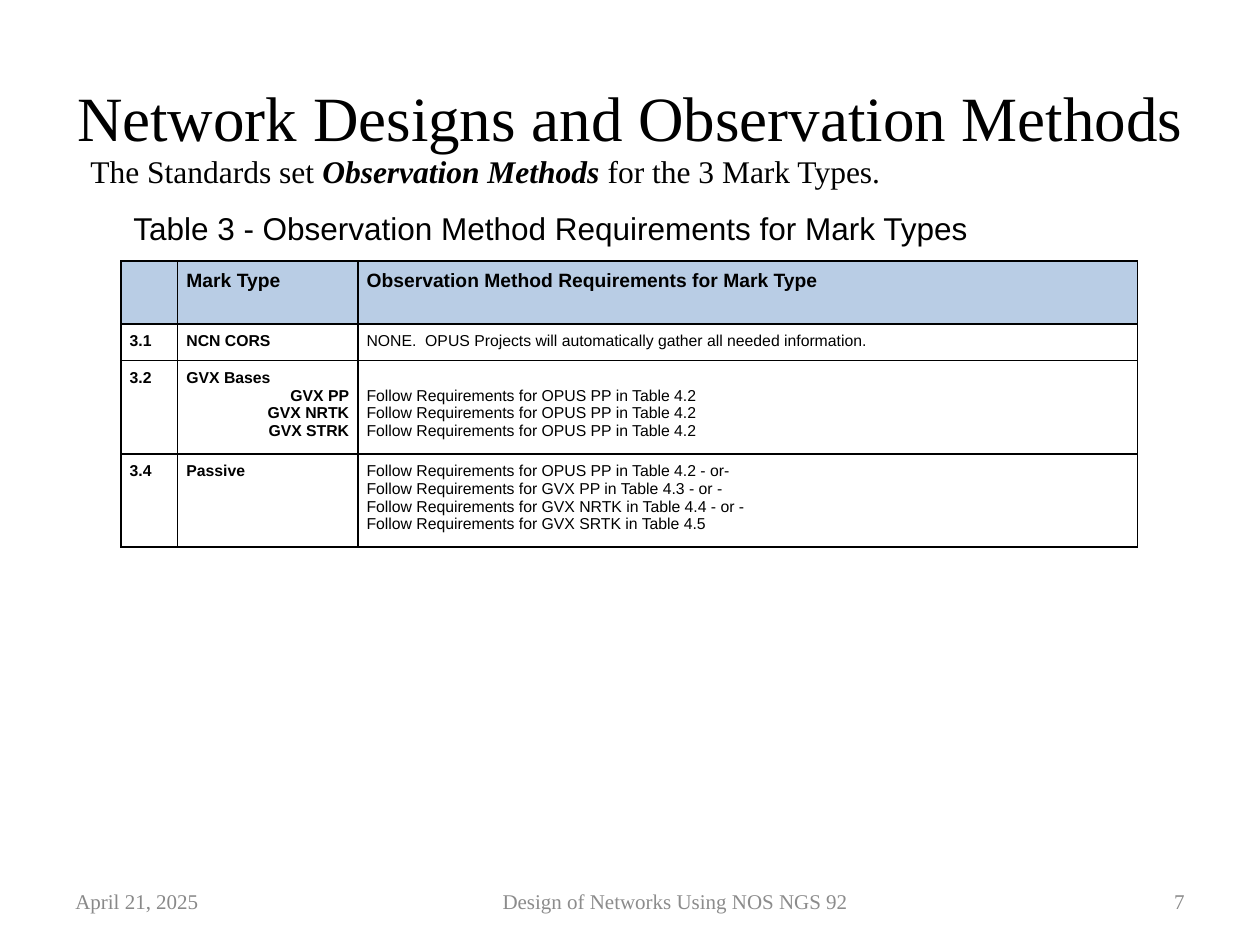
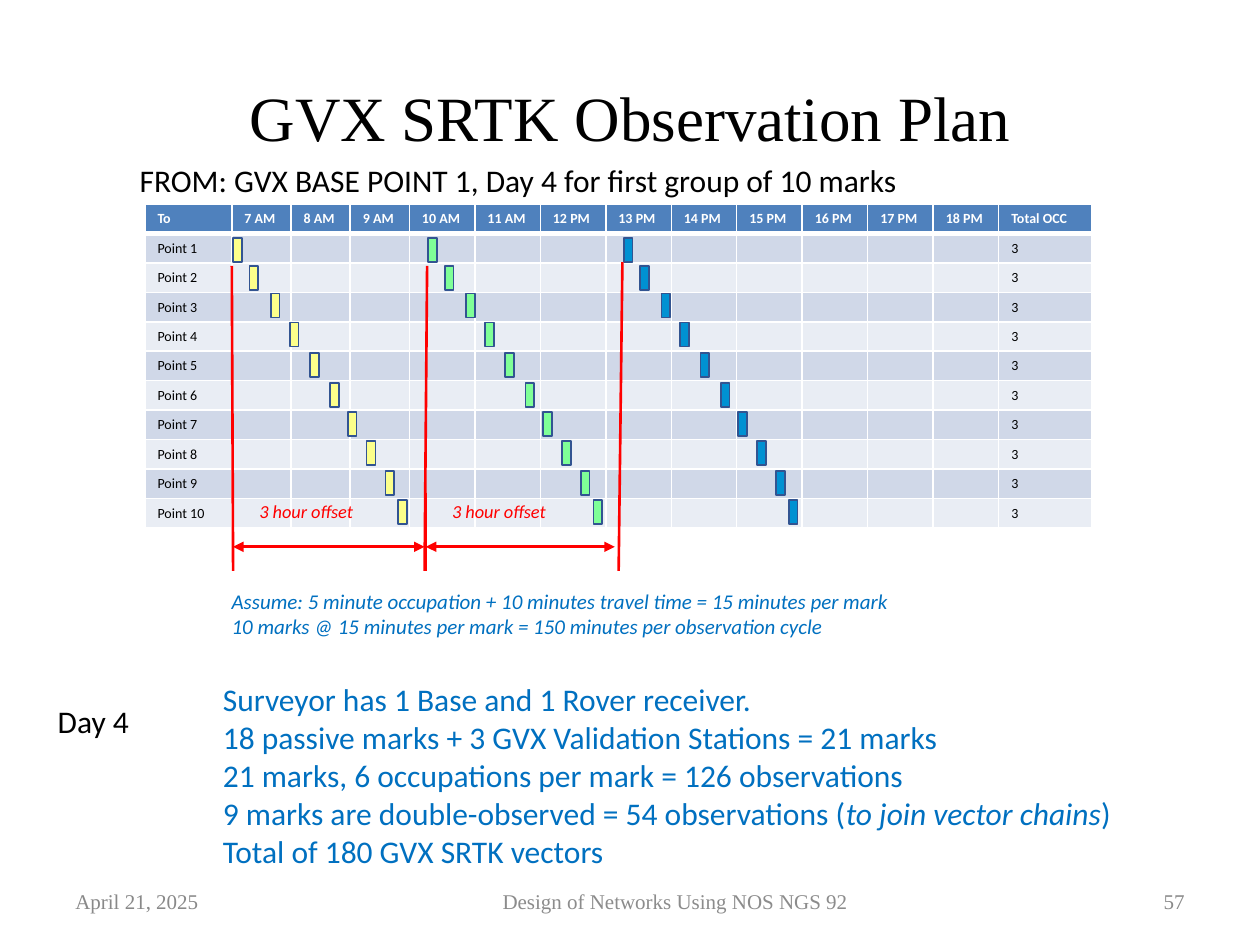
from dataclasses import dataclass, replace
from typing import NamedTuple, Optional

from lxml import etree
from pptx import Presentation
from pptx import util as u
from pptx.dml.color import RGBColor
from pptx.enum import shapes, text
from pptx.oxml import ns

BLACK = RGBColor(0x00, 0x00, 0x00)
WHITE = RGBColor(0xFF, 0xFF, 0xFF)
FOOTER_GRAY = RGBColor(0x89, 0x89, 0x89)
FOOTER_TITLE_GRAY = RGBColor(0x8C, 0x8C, 0x8C)
METHOD_HEADER = RGBColor(0xB9, 0xCD, 0xE5)
PLAN_HEADER = RGBColor(0x4F, 0x81, 0xBD)
PLAN_BANDS = (RGBColor(0xD0, 0xD8, 0xE8), RGBColor(0xE9, 0xED, 0xF4))
NOTE_BLUE = RGBColor(0x00, 0x70, 0xC0)
OFFSET_RED = RGBColor(0xFF, 0x00, 0x00)
MARKER_LINE = RGBColor(0x32, 0x54, 0x91)
YELLOW = RGBColor(0xFC, 0xFF, 0x8B)
GREEN = RGBColor(0x7F, 0xFF, 0x97)
BLUE = RGBColor(0x00, 0x91, 0xD2)

LEFT, CENTER, RIGHT = text.PP_ALIGN.LEFT, text.PP_ALIGN.CENTER, text.PP_ALIGN.RIGHT
TOP, MIDDLE = text.MSO_ANCHOR.TOP, text.MSO_ANCHOR.MIDDLE


@dataclass(frozen=True)
class TextStyle:
    font: str
    size: float
    color: RGBColor = BLACK
    bold: bool = False
    italic: bool = False
    align: int = LEFT


class Span(NamedTuple):
    text: str
    bold: bool = False
    italic: bool = False


class Box(NamedTuple):
    left: float
    top: float
    width: float
    height: float


class Line(NamedTuple):
    start: tuple
    end: tuple
    arrows: bool = False


class Cycle(NamedTuple):
    left: float
    color: RGBColor


TITLE = TextStyle("Times New Roman", 36, align=CENTER)
FOOTER = TextStyle("Times New Roman", 12, FOOTER_GRAY)
INTRO = TextStyle("Times New Roman", 18)
CAPTION = TextStyle("Arial", 18)
METHOD_HEAD = TextStyle("Arial", 11, bold=True)
METHOD_TEXT = TextStyle("Arial", 9)
METHOD_LABEL = replace(METHOD_TEXT, bold=True)
PLAN_HEAD = TextStyle("Calibri", 8, WHITE, bold=True)
PLAN_TEXT = TextStyle("Calibri", 8)
HEADING = TextStyle("Calibri", 18)
SUMMARY = replace(HEADING, color=NOTE_BLUE)
ASSUMPTION = TextStyle("Calibri", 12, NOTE_BLUE, italic=True)
OFFSET_LABEL = TextStyle("Calibri", 10.5, OFFSET_RED, italic=True)

METHOD_INSET = 0.07
METHOD_COLUMNS = (0.45, 1.43, 6.19)
METHOD_ROWS = (0.5, 0.29, 0.74, 0.74)
FOLLOW = "Follow Requirements for "
METHODS = (
    ("3.1", ("NCN CORS",), ("NONE.  OPUS Projects will automatically gather all needed information.",)),
    ("3.2", ("GVX Bases", "GVX PP", "GVX NRTK", "GVX STRK"), (FOLLOW + "OPUS PP in Table 4.2",) * 3),
    ("3.4", ("Passive",), (
        FOLLOW + "OPUS PP in Table 4.2 - or-",
        FOLLOW + "GVX PP in Table 4.3 - or -",
        FOLLOW + "GVX NRTK in Table 4.4 - or -",
        FOLLOW + "GVX SRTK in Table 4.5",
    )),
)

POINT_COUNT = 10
HOURS = [f"{hour} {'AM' if hour < 12 else 'PM'}" for hour in range(7, 19)]
PLAN_COLUMNS = (0.69, *[0.47] * 3, *[0.52] * 9, 0.74)
CYCLES = (Cycle(1.85, YELLOW), Cycle(3.4, GREEN), Cycle(4.95, BLUE))
MARKER_STEPS = (0, 0.13, 0.3, 0.45, 0.61, 0.77, 0.91, 1.06, 1.21, 1.31)
MARKER_TOPS = (1.89, 2.11, 2.33, 2.56, 2.8, 3.04, 3.27, 3.5, 3.74, 3.97)
OFFSET_LINES = (
    Line((1.84, 2.11), (1.85, 4.53)),
    Line((3.39, 2.11), (3.37, 4.53)),
    Line((1.85, 4.34), (3.37, 4.34), True),
    Line((3.38, 3.91), (3.38, 4.53)),
    Line((4.94, 2.08), (4.91, 4.53)),
    Line((3.38, 4.34), (4.88, 4.34), True),
)


def inches(values) -> list:
    return [u.Inches(value) for value in values]


def write_lines(frame, lines, style: TextStyle) -> None:
    for index, line in enumerate(lines):
        paragraph = frame.paragraphs[0] if index == 0 else frame.add_paragraph()
        paragraph.alignment = style.align
        for span in [Span(line)] if isinstance(line, str) else line:
            run = paragraph.add_run()
            run.text = span.text
            run.font.name = style.font
            run.font.size = u.Pt(style.size)
            run.font.bold = style.bold or span.bold
            run.font.italic = style.italic or span.italic
            run.font.color.rgb = style.color


def add_text(slide, box: Box, lines, style: TextStyle, anchor=TOP) -> None:
    frame = slide.shapes.add_textbox(*inches(box)).text_frame
    frame.word_wrap = True
    frame.vertical_anchor = anchor
    write_lines(frame, lines, style)


def add_frame(presentation, title: str, number: int):
    slide = presentation.slides.add_slide(presentation.slide_layouts[6])
    add_text(slide, Box(0.5, 0.3, 9, 1.25), [title], TITLE, MIDDLE)
    footers = (
        (0.5, 1.4, "April 21, 2025", FOOTER),
        (2.31, 6.14, "Design of Networks Using NOS NGS 92 ",
         replace(FOOTER, color=FOOTER_TITLE_GRAY, align=CENTER)),
        (8.71, 0.79, str(number), replace(FOOTER, align=RIGHT)),
    )
    for left, width, words, style in footers:
        add_text(slide, Box(left, 6.95, width, 0.4), [words], style, MIDDLE)
    return slide


def add_grid(slide, left: float, top: float, columns, rows):
    box = Box(left, top, sum(columns), sum(rows))
    table = slide.shapes.add_table(len(rows), len(columns), *inches(box)).table
    table.first_row = False
    table.horz_banding = False
    for column, width in zip(table.columns, columns):
        column.width = u.Inches(width)
    for row, height in zip(table.rows, rows):
        row.height = u.Inches(height)
    return table


def border_cell(cell, color: RGBColor, bottom: float = 1, top: float = 1) -> None:
    properties = cell._tc.get_or_add_tcPr()
    for side, width in (("L", 1), ("R", 1), ("T", top), ("B", bottom)):
        line = etree.SubElement(properties, ns.qn(f"a:ln{side}"), w=str(u.Pt(width)))
        fill = etree.SubElement(line, ns.qn("a:solidFill"))
        etree.SubElement(fill, ns.qn("a:srgbClr"), val=str(color))


def fill_cell(cell, lines, style: TextStyle, fill: Optional[RGBColor] = None) -> None:
    if fill is None:
        cell.fill.background()
    else:
        cell.fill.solid()
        cell.fill.fore_color.rgb = fill
    if lines:
        write_lines(cell.text_frame, lines, style)
    else:
        paragraph = cell.text_frame.paragraphs[0]._p
        etree.SubElement(paragraph, ns.qn("a:endParaRPr"), sz=str(int(style.size * 100)))


def add_method_table(slide) -> None:
    table = add_grid(slide, 0.96, 2.07, METHOD_COLUMNS, METHOD_ROWS)
    for cell in table.iter_cells():
        border_cell(cell, BLACK)
        cell.margin_left = cell.margin_right = u.Inches(METHOD_INSET)
        cell.margin_top = cell.margin_bottom = u.Inches(METHOD_INSET)
    headers = ([], ["Mark Type"], ["Observation Method Requirements for Mark Type"])
    for column, header in enumerate(headers):
        fill_cell(table.cell(0, column), header, METHOD_HEAD, METHOD_HEADER)
    for row, (number, marks, requirements) in enumerate(METHODS, 1):
        fill_cell(table.cell(row, 0), [number], METHOD_LABEL)
        mark_cell, requirement_cell = table.cell(row, 1), table.cell(row, 2)
        fill_cell(mark_cell, marks, METHOD_LABEL)
        for paragraph in mark_cell.text_frame.paragraphs[1:]:
            paragraph.alignment = RIGHT
        fill_cell(requirement_cell, requirements, METHOD_TEXT)
        if len(marks) > len(requirements):
            requirement_cell.margin_top = u.Inches(METHOD_INSET + 0.14)


def add_plan_table(slide) -> None:
    table = add_grid(slide, 1.15, 1.62, PLAN_COLUMNS, [0.23] * (POINT_COUNT + 1))
    rows = [["To", *HOURS, "Total OCC"]]
    rows += [[f"Point {point}", *[""] * len(HOURS), "3"] for point in range(1, POINT_COUNT + 1)]
    for row, words in enumerate(rows):
        style = PLAN_TEXT if row else PLAN_HEAD
        fill = PLAN_BANDS[(row - 1) % 2] if row else PLAN_HEADER
        for column, word in enumerate(words):
            cell = table.cell(row, column)
            border_cell(cell, WHITE, bottom=1 if row else 3, top=3 if row == 1 else 1)
            fill_cell(cell, [word] if word else [], style, fill)


def add_markers(slide, cycle: Cycle) -> None:
    for step, top in zip(MARKER_STEPS, MARKER_TOPS):
        box = Box(cycle.left + step, top, 0.07, 0.19)
        shape = slide.shapes.add_shape(shapes.MSO_SHAPE.RECTANGLE, *inches(box))
        shape.shadow.inherit = False
        shape.fill.solid()
        shape.fill.fore_color.rgb = cycle.color
        shape.line.color.rgb = MARKER_LINE
        shape.line.width = u.Pt(1)


def add_line(slide, line: Line) -> None:
    connector = slide.shapes.add_connector(
        shapes.MSO_CONNECTOR.STRAIGHT, *inches(line.start), *inches(line.end))
    connector.line.color.rgb = OFFSET_RED
    connector.line.width = u.Pt(1.5)
    properties = connector._element.spPr
    etree.SubElement(properties, ns.qn("a:effectLst"))
    if line.arrows:
        for end in ("a:headEnd", "a:tailEnd"):
            etree.SubElement(properties.find(ns.qn("a:ln")), ns.qn(end), type="triangle")


def build_methods_slide(presentation) -> None:
    slide = add_frame(presentation, "Network Designs and Observation Methods", 7)
    intro = [
        Span("The Standards set "),
        Span("Observation Methods ", bold=True, italic=True),
        Span("for the 3 Mark Types."),
    ]
    add_text(slide, Box(0.62, 1.16, 7.57, 0.4), [intro], INTRO)
    add_text(slide, Box(0.96, 1.61, 6.94, 0.4),
             ["Table 3 - Observation Method Requirements for Mark Types"], CAPTION)
    add_method_table(slide)


def build_plan_slide(presentation) -> None:
    slide = add_frame(presentation, "GVX SRTK Observation Plan", 57)
    add_plan_table(slide)
    add_text(slide, Box(1.01, 1.23, 7.65, 0.4),
             ["FROM: GVX BASE POINT 1, Day 4 for first group of 10 marks"], HEADING)
    for cycle in CYCLES:
        add_markers(slide, cycle)
    add_text(slide, Box(1.74, 4.62, 6.2, 0.5), [
        "Assume: 5 minute occupation + 10 minutes travel time = 15 minutes per mark",
        "10 marks @ 15 minutes per mark = 150 minutes per observation cycle",
    ], ASSUMPTION)
    add_text(slide, Box(1.67, 5.35, 7.35, 1.62), [
        "Surveyor has 1 Base and 1 Rover receiver.",
        "18 passive marks + 3 GVX Validation Stations = 21 marks",
        "21 marks, 6 occupations per mark = 126 observations",
        [Span("9 marks are double-observed = 54 observations ("),
         Span("to join vector chains", italic=True), Span(")")],
        "Total of 180 GVX SRTK vectors",
    ], SUMMARY)
    for line in OFFSET_LINES:
        add_line(slide, line)
    for left in (1.96, 3.49):
        add_text(slide, Box(left, 3.92, 1.3, 0.28), ["3 hour offset"], OFFSET_LABEL)
    add_text(slide, Box(0.36, 5.52, 0.85, 0.4), ["Day 4"], HEADING)


def main() -> None:
    presentation = Presentation()
    presentation.slide_width = u.Inches(10)
    presentation.slide_height = u.Inches(7.5)
    build_methods_slide(presentation)
    build_plan_slide(presentation)
    presentation.save("out.pptx")


if __name__ == "__main__":
    main()
